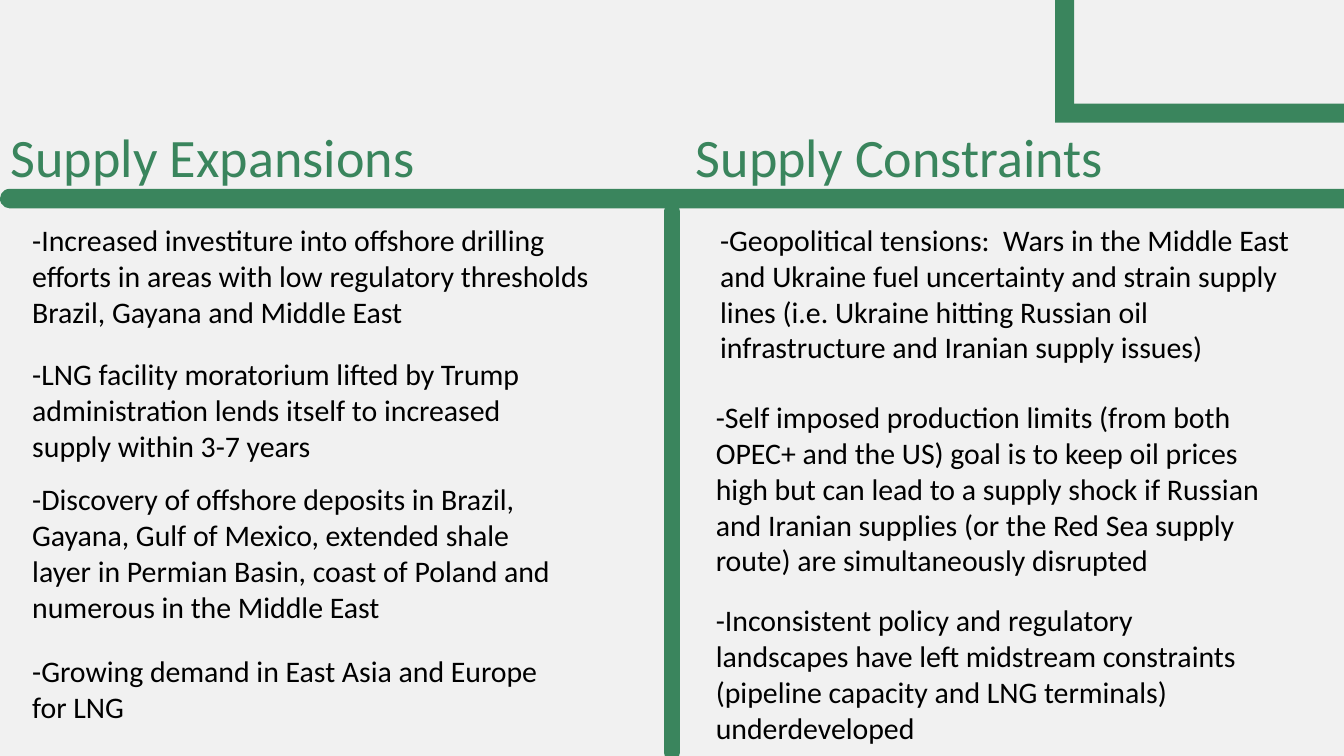
from pptx import Presentation
from pptx.dml.color import RGBColor
from pptx.enum.shapes import MSO_SHAPE
from pptx.enum.text import MSO_ANCHOR, MSO_AUTO_SIZE, PP_ALIGN
from pptx.util import Cm, Pt

GREEN = RGBColor(0x3A, 0x85, 0x5D)
BLACK = RGBColor(0x00, 0x00, 0x00)
PALE_GREY = RGBColor(0xF1, 0xF1, 0xF1)
RECTANGLE = MSO_SHAPE.RECTANGLE
ROUNDED = MSO_SHAPE.ROUNDED_RECTANGLE
TOP = MSO_ANCHOR.TOP
LEFT = PP_ALIGN.LEFT
NO_AUTOFIT = MSO_AUTO_SIZE.NONE
TITLE_ONLY = 5
FONT = "Calibri"
HEADING_SIZE = Pt(29)
POINT_SIZE = Pt(16)
INSET = Cm(0.25)

BARS = [
    (ROUNDED, 0, 3.57, 25.68, 0.37),
    (ROUNDED, 12.55, 3.84, 0.3, 10.54),
    (RECTANGLE, 19.94, 0, 0.36, 2.06),
    (RECTANGLE, 19.94, 1.96, 5.46, 0.36),
]
EXPANSIONS = [
    (0.36, 3.94, 11.13, 1.35,
     "-Increased investiture into offshore drilling efforts in areas with low "
     "regulatory thresholds Brazil, Gayana and Middle East"),
    (0.36, 6.48, 10.59, 1.35,
     "-LNG facility moratorium lifted by Trump administration lends itself to "
     "increased supply within 3-7 years"),
    (0.36, 8.84, 10.52, 1.47,
     "-Discovery of offshore deposits in Brazil, Gayana, Gulf of Mexico, extended "
     "shale layer in Permian Basin, coast of Poland and numerous in the Middle East"),
    (0.36, 12.09, 10.24, 1.68,
     "-Growing demand in East Asia and Europe for LNG"),
]
CONSTRAINTS = [
    (13.36, 3.94, 11.73, 2.24,
     "-Geopolitical tensions:  Wars in the Middle East and Ukraine fuel uncertainty "
     "and strain supply lines (i.e. Ukraine hitting Russian oil infrastructure and "
     "Iranian supply issues)"),
    (13.28, 7.29, 11.28, 1.22,
     "-Self imposed production limits (from both OPEC+ and the US) goal is to keep "
     "oil prices high but can lead to a supply shock if Russian and Iranian supplies "
     "(or the Red Sea supply route) are simultaneously disrupted"),
    (13.28, 11.13, 10.97, 1.47,
     "-Inconsistent policy and regulatory landscapes have left midstream constraints "
     "(pipeline capacity and LNG terminals) underdeveloped"),
]


def write_text(box, text, size, color, inset):
    """Fill a box with one left-aligned paragraph and return the paragraph."""
    frame = box.text_frame
    frame.word_wrap = True
    frame.auto_size = NO_AUTOFIT
    frame.vertical_anchor = TOP
    frame.margin_left = frame.margin_right = inset
    frame.margin_top = frame.margin_bottom = inset
    para = frame.paragraphs[0]
    para.alignment = LEFT
    span = para.add_run()
    span.text = text
    span.font.name = FONT
    span.font.size = size
    span.font.color.rgb = color
    return para


def add_title(page, text):
    """Move and format the title placeholder as the left column heading."""
    title = page.shapes.title
    title.left, title.top = Cm(0.2), Cm(2.41)
    title.width, title.height = Cm(11.4), Cm(2.39)
    para = write_text(title, text, HEADING_SIZE, GREEN, 0)
    para.line_spacing = 0.96


def add_text(page, left, top, width, height, text, size=POINT_SIZE, color=BLACK):
    """Add a wrapped text box in the body style unless told otherwise."""
    box = page.shapes.add_textbox(Cm(left), Cm(top), Cm(width), Cm(height))
    write_text(box, text, size, color, INSET)


def add_bar(page, kind, left, top, width, height):
    """Add a green bar, with full round ends if its kind is rounded."""
    bar = page.shapes.add_shape(kind, Cm(left), Cm(top), Cm(width), Cm(height))
    bar.shadow.inherit = False
    bar.fill.solid()
    bar.fill.fore_color.rgb = GREEN
    bar.line.fill.background()
    if kind == ROUNDED:
        bar.adjustments[0] = 0.5


def main():
    """Build the supply slide and save the deck."""
    deck = Presentation()
    deck.slide_width, deck.slide_height = Cm(25.4), Cm(14.29)
    page = deck.slides.add_slide(deck.slide_layouts[TITLE_ONLY])
    page.background.fill.solid()
    page.background.fill.fore_color.rgb = PALE_GREY
    add_title(page, "Supply Expansions")
    for bar in BARS:
        add_bar(page, *bar)
    add_text(page, 12.9, 2.08, 11.73, 1.47, "Supply Constraints", HEADING_SIZE, GREEN)
    for point in EXPANSIONS + CONSTRAINTS:
        add_text(page, *point)
    deck.save("out.pptx")


if __name__ == "__main__":
    main()
